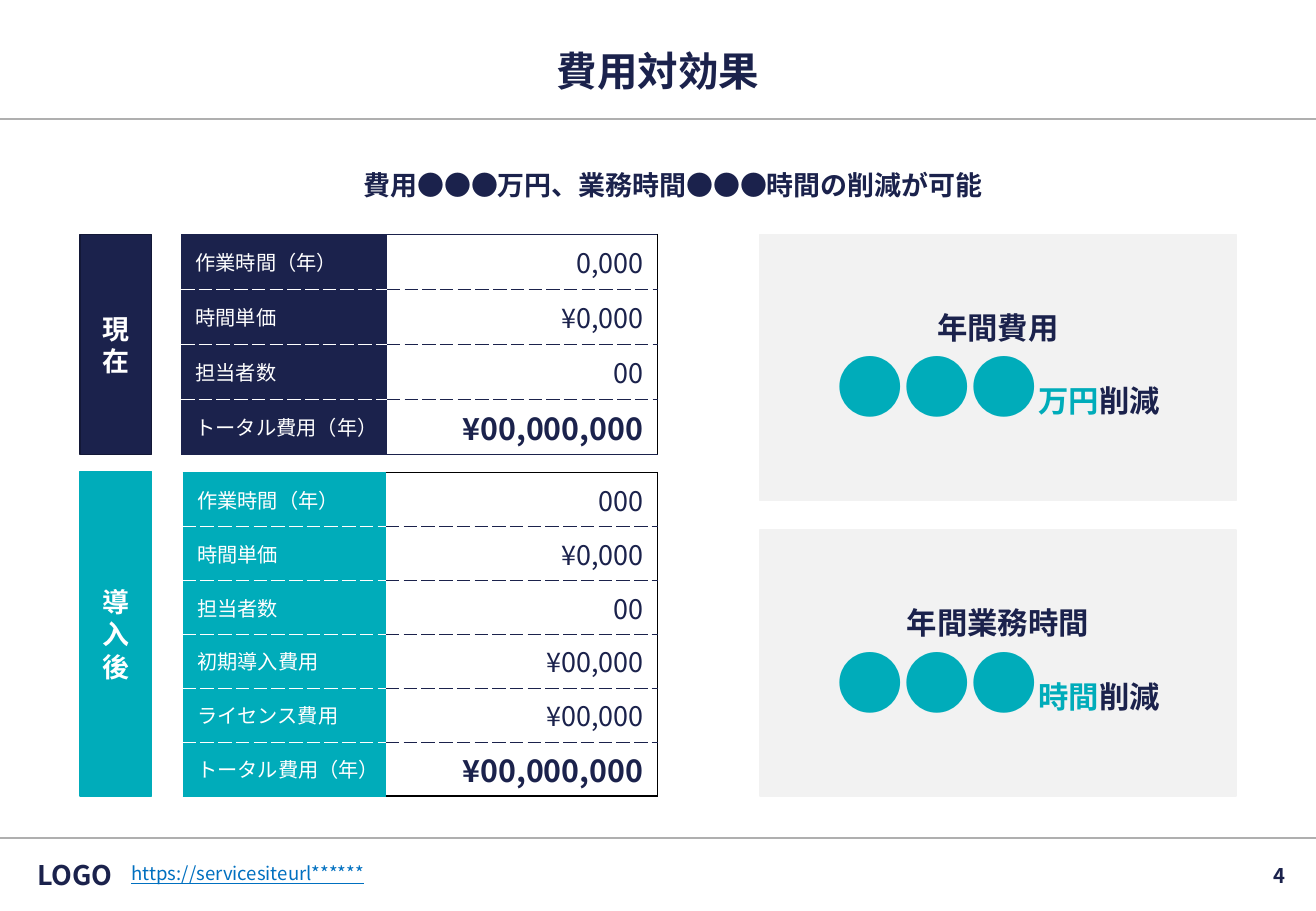
from lxml import etree
from pptx import Presentation
from pptx.dml.color import RGBColor
from pptx.enum.shapes import MSO_CONNECTOR, MSO_SHAPE
from pptx.enum.text import MSO_ANCHOR, PP_ALIGN
from pptx.oxml.ns import qn
from pptx.util import Pt

LEFT, CENTER, RIGHT = PP_ALIGN.LEFT, PP_ALIGN.CENTER, PP_ALIGN.RIGHT
TOP, MIDDLE = MSO_ANCHOR.TOP, MSO_ANCHOR.MIDDLE
RECT, STRAIGHT = MSO_SHAPE.RECTANGLE, MSO_CONNECTOR.STRAIGHT

FONT = "Noto Sans CJK JP"
NO_STYLE = "{2D5ABB26-0587-4C30-8999-92F81FD0307C}"
COLORS = {
    "navy": "1B224C", "navy_edge": "131837", "teal": "00ACBA", "white": "FFFFFF",
    "black": "000000", "panel": "F2F2F2", "rule": "AFAFAF", "link": "0070C0",
}
W, H = 780, 540
BODY_TOP = 139
ROWS_NOW = [("作業時間（年）", "0,000"), ("時間単価", "¥0,000"), ("担当者数", "00"),
            ("トータル費用（年）", "¥00,000,000")]
ROWS_AFTER = [("作業時間（年）", "000"), ("時間単価", "¥0,000"), ("担当者数", "00"),
              ("初期導入費用", "¥00,000"), ("ライセンス費用", "¥00,000"),
              ("トータル費用（年）", "¥00,000,000")]


def rgb(name):
    return RGBColor.from_string(COLORS[name])


def format_run(r, size, color, bold=False):
    r.font.size, r.font.bold, r.font.name = Pt(size), bold, FONT
    r.font.color.rgb = rgb(color)
    etree.SubElement(r._r.get_or_add_rPr(), qn("a:ea"), typeface=FONT)


def set_margins(target, left, top, right, bottom):
    target.margin_left, target.margin_top = Pt(left), Pt(top)
    target.margin_right, target.margin_bottom = Pt(right), Pt(bottom)


def add_text(slide, box, text, size, color="navy", bold=True, align=CENTER,
             anchor=MIDDLE, margins=(2.9, 2.9, 2.9, 2.9), spacing=1.0):
    tf = slide.shapes.add_textbox(*map(Pt, box)).text_frame
    tf.word_wrap, tf.vertical_anchor = True, anchor
    set_margins(tf, *margins)
    p = tf.paragraphs[0]
    p.text, p.alignment, p.line_spacing = text, align, spacing
    format_run(p.runs[0], size, color, bold)
    return p.runs[0]


def add_rule(slide, y):
    line = slide.shapes.add_connector(STRAIGHT, 0, Pt(y), Pt(W), Pt(y))
    line.line.color.rgb, line.line.width = rgb("rule"), Pt(0.75)
    etree.SubElement(line._element.spPr, qn("a:effectLst"))


def add_block(slide, box, fill, edge, paragraphs):
    """Rectangle whose paragraphs are lists of (text, size, colour) runs."""
    sp = slide.shapes.add_shape(RECT, *map(Pt, box))
    sp.shadow.inherit = False
    sp.fill.solid()
    sp.fill.fore_color.rgb = rgb(fill)
    sp.line.color.rgb, sp.line.width = rgb(edge), Pt(1)
    tf = sp.text_frame
    tf.word_wrap, tf.vertical_anchor = True, MIDDLE
    for i, runs in enumerate(paragraphs):
        p = tf.add_paragraph() if i else tf.paragraphs[0]
        p.alignment = CENTER
        for text, size, color in runs:
            r = p.add_run()
            r.text = text
            format_run(r, size, color, True)


def add_border(cell, side, color, width, dash=False):
    ln = etree.SubElement(cell._tc.get_or_add_tcPr(), qn("a:ln" + side), w=str(Pt(width)))
    fill = etree.SubElement(ln, qn("a:solidFill"))
    etree.SubElement(fill, qn("a:srgbClr"), val=COLORS[color])
    etree.SubElement(ln, qn("a:prstDash"), val="dash" if dash else "solid")


def add_cost_table(slide, box, label_width, rows, fill, label_edge, value_edge):
    """Label and value columns; the edges are (colour, width) of the outer top and bottom."""
    x, y, w, h = box
    frame = slide.shapes.add_table(len(rows), 2, Pt(x), Pt(y), Pt(w), Pt(h))
    table = frame.table
    table.first_row = table.horz_banding = False
    table._tbl.tblPr.find(qn("a:tableStyleId")).text = NO_STYLE
    table.columns[0].width, table.columns[1].width = Pt(label_width), Pt(w - label_width)
    last = len(rows) - 1
    for i, row in enumerate(rows):
        table.rows[i].height = Pt(h / len(rows))
        for j, text in enumerate(row):
            cell, is_value = table.cell(i, j), j == 1
            cell.vertical_anchor = MIDDLE
            set_margins(cell, *((1.4, 0.7, 8.6, 0.7) if is_value else (8.6, 0.7, 1.4, 0.7)))
            p = cell.text_frame.paragraphs[0]
            p.text, p.alignment = text, RIGHT if is_value else LEFT
            total = is_value and i == last
            size = 18 if total else 16 if is_value else 12
            format_run(p.runs[0], size, "navy" if is_value else "white", total)

            edge = value_edge if is_value else label_edge
            inner = ("navy" if is_value else "white", 0.5, True)
            if is_value:
                add_border(cell, "R", "black", 0.75)
            add_border(cell, "T", *(edge if i == 0 else inner))
            add_border(cell, "B", *(edge if i == last else inner))
            if is_value:
                cell.fill.background()
            else:
                cell.fill.solid()
                cell.fill.fore_color.rgb = rgb(fill)


def add_header(slide, box):
    x, y, w, h = box
    add_text(slide, (x + 47, y + 28, w - 94, 28), "費用対効果", 24,
             margins=(2.9, 5.8, 2.9, 2.9), spacing=0.9)
    add_rule(slide, y + h)


def add_costs(slide, box):
    x, y, w, h = box
    tab_w, now_h, after_y = 42.5, 130.4, 140.5
    add_block(slide, (x, y, tab_w, now_h), "navy", "navy_edge", [[("現在", 16, "white")]])
    add_block(slide, (x, y + after_y, tab_w, h - after_y), "teal", "teal",
              [[("導入後", 16, "white")]])
    add_cost_table(slide, (x + 60, y, w - 60, now_h), 122, ROWS_NOW, "navy",
                   ("navy", 1), ("navy", 1))
    add_cost_table(slide, (x + 61, y + after_y + 0.5, w - 61, h - after_y - 0.5), 120.5,
                   ROWS_AFTER, "teal", ("teal", 0.5), ("black", 0.75))


def add_savings(slide, box):
    x, y, w, h = box
    card_h, gap = 157.7, h - 2 * 157.7
    for i, (heading, unit) in enumerate([("年間費用", "万円"), ("年間業務時間", "時間")]):
        add_block(slide, (x, y + i * (card_h + gap), w, card_h), "panel", "panel",
                  [[(heading, 18, "navy")],
                   [("●●●", 40, "teal"), (unit, 18, "teal"), ("削減", 18, "navy")]])


def add_footer(slide, box):
    x, y, w, h = box
    add_rule(slide, y)
    add_text(slide, (x + 15, y + 7.5, 59, 28), "LOGO", 16)
    url = add_text(slide, (x + 75, y + 11.5, 414, 19), "https://servicesiteurl******", 11,
                   "link", bold=False, align=LEFT, anchor=TOP)
    url.font.underline = True
    add_text(slide, (x + w - 187, y + 8, 176, 28), "4", 12, align=RIGHT,
             margins=(7.2, 3.6, 7.2, 3.6))


def main():
    prs = Presentation()
    prs.slide_width, prs.slide_height = Pt(W), Pt(H)
    slide = prs.slides.add_slide(prs.slide_layouts[6])
    add_header(slide, (0, 0, W, 70.6))
    add_text(slide, (47, 91.5, 686, 45), "費用●●●万円、業務時間●●●時間の削減が可能", 16,
             anchor=TOP, margins=(20.9, 2.9, 2.9, 2.9), spacing=1.3)
    add_costs(slide, (47.3, BODY_TOP, 342.7, 333))
    add_savings(slide, (450.5, BODY_TOP, 282, 333))
    add_footer(slide, (0, 496.8, W, H - 496.8))
    prs.save("out.pptx")


if __name__ == "__main__":
    main()
